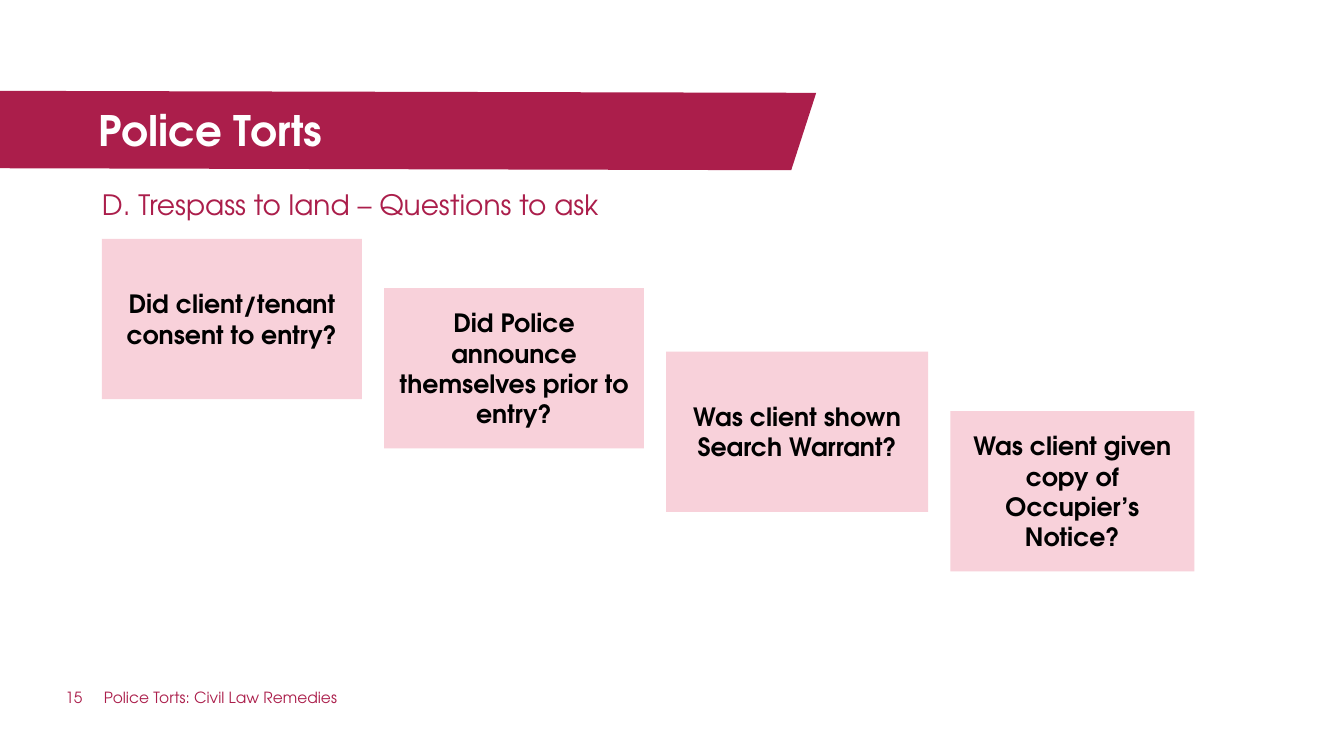
from lxml import etree
from pptx import Presentation
from pptx.dml.color import RGBColor
from pptx.enum.shapes import MSO_SHAPE
from pptx.enum.text import MSO_ANCHOR, MSO_AUTO_SIZE, PP_ALIGN
from pptx.util import Cm, Pt

RECTANGLE = MSO_SHAPE.RECTANGLE
TOP, MIDDLE = MSO_ANCHOR.TOP, MSO_ANCHOR.MIDDLE
LEFT, CENTER = PP_ALIGN.LEFT, PP_ALIGN.CENTER
NO_AUTOFIT = MSO_AUTO_SIZE.NONE

FONT = "TeX Gyre Adventor"
CRIMSON = RGBColor(0xAB, 0x1E, 0x4B)
PINK = RGBColor(0xF8, 0xD1, 0xDA)
BLACK = RGBColor(0, 0, 0)
WHITE = RGBColor(0xFF, 0xFF, 0xFF)

TITLE_ONLY = 5
CARD_GAP = 0.56
CARD_HEIGHT = 4.04
# Question, width and drop below the first card, in cm
QUESTIONS = [
    ("Did client/tenant consent to entry?", 6.55, 0),
    ("Did Police announce themselves prior to entry?", 6.55, 1.24),
    ("Was client shown Search Warrant?", 6.6, 2.84),
    ("Was client given copy of Occupier’s Notice?", 6.15, 4.34),
]


def write(shape, text, size, color, bold=False, align=LEFT, anchor=TOP):
    frame = shape.text_frame
    frame.text = text
    frame.word_wrap = True
    frame.auto_size = NO_AUTOFIT
    frame.vertical_anchor = anchor
    paragraph = frame.paragraphs[0]
    paragraph.alignment = align
    font = paragraph.runs[0].font
    font.name, font.size, font.bold = FONT, Pt(size), bold
    font.color.rgb = color
    return paragraph


def remove_margins(shape):
    frame = shape.text_frame
    frame.margin_left = frame.margin_right = 0
    frame.margin_top = frame.margin_bottom = 0


def add_label(slide, box, text, size):
    label = slide.shapes.add_textbox(*(Cm(length) for length in box))
    remove_margins(label)
    return write(label, text, size, CRIMSON)


def add_title_banner(slide, left, top, width, height):
    # Slanted band
    corners = [(width, 0.05), (width - 0.63, height), (0, height - 0.05)]
    builder = slide.shapes.build_freeform(Cm(left), Cm(top))
    builder.add_line_segments(
        [(Cm(left + x), Cm(top + y)) for x, y in corners], close=True)
    band = builder.convert_to_shape()
    band.shadow.inherit = False
    band.fill.solid()
    band.fill.fore_color.rgb = CRIMSON
    band.line.fill.background()

    # Title, brought in front of the band
    title = slide.shapes.title
    title.left, title.top = Cm(left + 2.49), Cm(top + 0.35)
    title.width, title.height = Cm(17.32), Cm(1.24)
    remove_margins(title)
    write(title, "Police Torts", 30, WHITE, bold=True)
    band.element.addnext(title.element)


def add_question_cards(slide, left, top):
    for question, width, drop in QUESTIONS:
        card = slide.shapes.add_shape(
            RECTANGLE, Cm(left), Cm(top + drop), Cm(width), Cm(CARD_HEIGHT))
        card.shadow.inherit = False
        card.fill.solid()
        card.fill.fore_color.rgb = PINK
        card.line.fill.background()
        write(card, question, 18, BLACK, bold=True, align=CENTER, anchor=MIDDLE)
        left += width + CARD_GAP


def add_footer(slide, left, top, height):
    add_label(slide, (left, top, 0.94, height), "15", 11)
    add_label(slide, (left + 0.97, top, 15.6, height),
              "Police Torts: Civil Law Remedies", 11)


def main():
    presentation = Presentation()
    presentation.slide_width, presentation.slide_height = Cm(33.87), Cm(19.05)
    slide = presentation.slides.add_slide(presentation.slide_layouts[TITLE_ONLY])

    add_title_banner(slide, 0, 2.29, 20.57, 2.0)

    # Subtitle
    subtitle = add_label(slide, (2.57, 4.55, 27.61, 1.19),
                         "D. Trespass to land – Questions to ask", 20)
    subtitle.line_spacing = 1.2

    add_question_cards(slide, 2.57, 6.02)
    add_footer(slide, 1.65, 17.35, 0.89)
    presentation.save("out.pptx")


if __name__ == "__main__":
    main()
